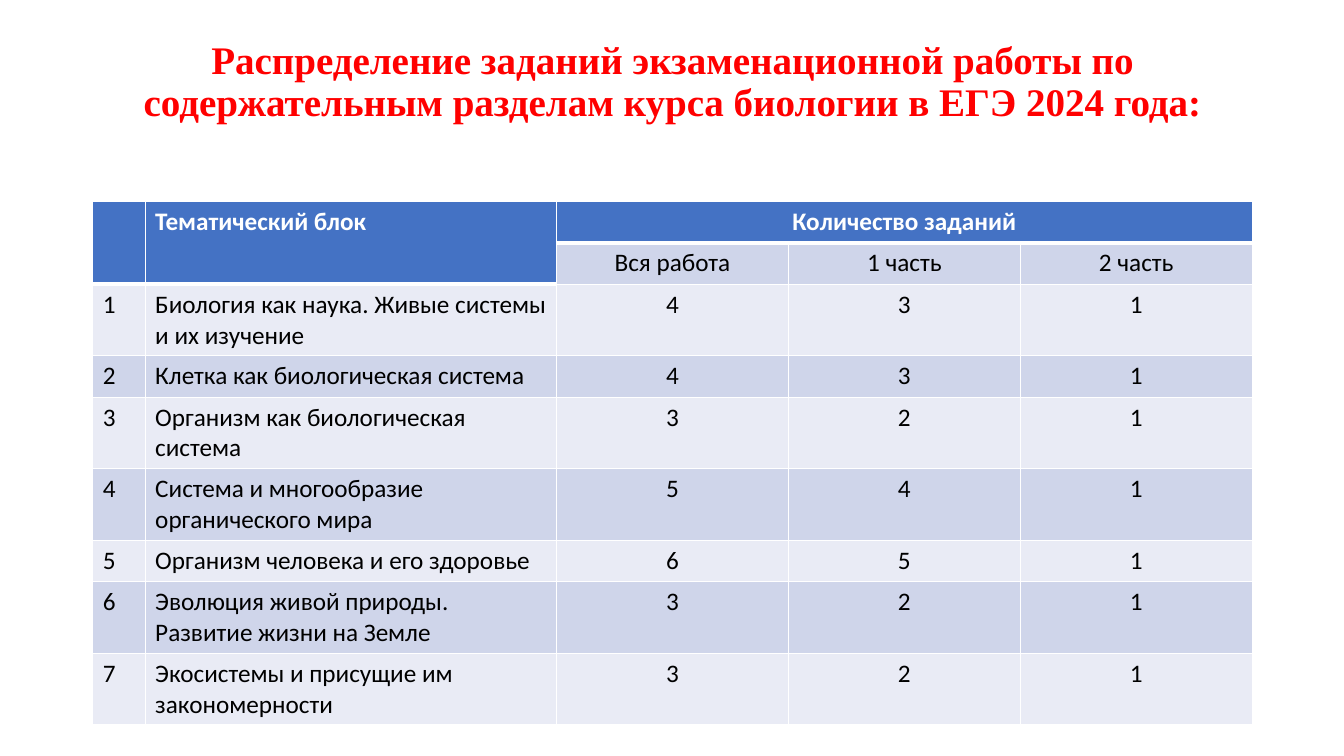
from lxml import etree
from pptx import Presentation, util as u
from pptx.dml.color import RGBColor
from pptx.enum import text
from pptx.oxml.ns import qn

WIDTH, HEIGHT = 13.33, 7.5
LEFT, CONTENT_WIDTH = 0.92, 11.5
COLUMN_WIDTHS = [0.52, 4.08, 2.3, 2.3, 2.3]
ROW_HEIGHT = 0.41
HEADER, DARK_BAND, LIGHT_BAND = "4472C4", "CFD5EA", "E9EBF5"

ROWS = [
    ["", "Тематический блок", "Количество заданий", "", ""],
    ["", "", "Вся работа", "1 часть", "2 часть"],
    ["1", "Биология как наука. Живые системы и их изучение", "4", "3", "1"],
    ["2", "Клетка как биологическая система", "4", "3", "1"],
    ["3", "Организм как биологическая система", "3", "2", "1"],
    ["4", "Система и многообразие органического мира", "5", "4", "1"],
    ["5", "Организм человека и его здоровье", "6", "5", "1"],
    ["6", "Эволюция живой природы. Развитие жизни на Земле", "3", "2", "1"],
    ["7", "Экосистемы и присущие им закономерности", "3", "2", "1"],
]


def set_font(paragraph, name, size, color, bold):
    font = paragraph.font
    font.name, font.size, font.bold = name, u.Pt(size), bold
    font.color.rgb = RGBColor.from_string(color)


def add_border(cell, side, points):
    """Draw a white line on one side of the cell: L, R, T or B."""
    properties = cell._tc.get_or_add_tcPr()
    line = etree.SubElement(properties, qn(f"a:ln{side}"), w=str(u.Pt(points)))
    fill = etree.SubElement(line, qn("a:solidFill"))
    etree.SubElement(fill, qn("a:srgbClr"), val="FFFFFF")


presentation = Presentation()
presentation.slide_width = u.Inches(WIDTH)
presentation.slide_height = u.Inches(HEIGHT)
slide = presentation.slides.add_slide(presentation.slide_layouts[5])

title = slide.shapes.title
title.left, title.top = u.Inches(LEFT), u.Inches(0.4)
title.width, title.height = u.Inches(CONTENT_WIDTH), u.Inches(1.45)
frame = title.text_frame
frame.text = ("Распределение заданий экзаменационной работы по "
              "содержательным разделам курса биологии в ЕГЭ 2024 года:")
frame.word_wrap = True
frame.auto_size = text.MSO_AUTO_SIZE.NONE
frame.vertical_anchor = text.MSO_ANCHOR.TOP
frame.margin_top = 0
heading = frame.paragraphs[0]
heading.alignment = text.PP_ALIGN.CENTER
heading.line_spacing = 0.9
set_font(heading, "Times New Roman", 27.9, "FF0000", True)

table = slide.shapes.add_table(
    len(ROWS), len(COLUMN_WIDTHS), u.Inches(LEFT), u.Inches(2),
    u.Inches(CONTENT_WIDTH), u.Inches(ROW_HEIGHT * len(ROWS))).table
for column, width in zip(table.columns, COLUMN_WIDTHS):
    column.width = u.Inches(width)

for row, values in enumerate(ROWS):
    table.rows[row].height = u.Inches(ROW_HEIGHT)
    for column, value in enumerate(values):
        cell = table.cell(row, column)
        header_end = 1 if column < 2 else 0
        add_border(cell, "L", 1)
        add_border(cell, "R", 1)
        add_border(cell, "T", 3 if row == header_end + 1 else 1)
        add_border(cell, "B", 3 if row == header_end else 1)

        is_header = row <= header_end
        band = DARK_BAND if row % 2 else LIGHT_BAND
        cell.fill.solid()
        cell.fill.fore_color.rgb = RGBColor.from_string(HEADER if is_header else band)
        cell.text = value
        paragraph = cell.text_frame.paragraphs[0]
        paragraph.alignment = text.PP_ALIGN.LEFT if column < 2 else text.PP_ALIGN.CENTER
        set_font(paragraph, "Calibri", 18, "FFFFFF" if is_header else "000000", is_header)

for column in range(2):
    table.cell(0, column).merge(table.cell(1, column))
table.cell(0, 2).merge(table.cell(0, 4))

presentation.save("out.pptx")
